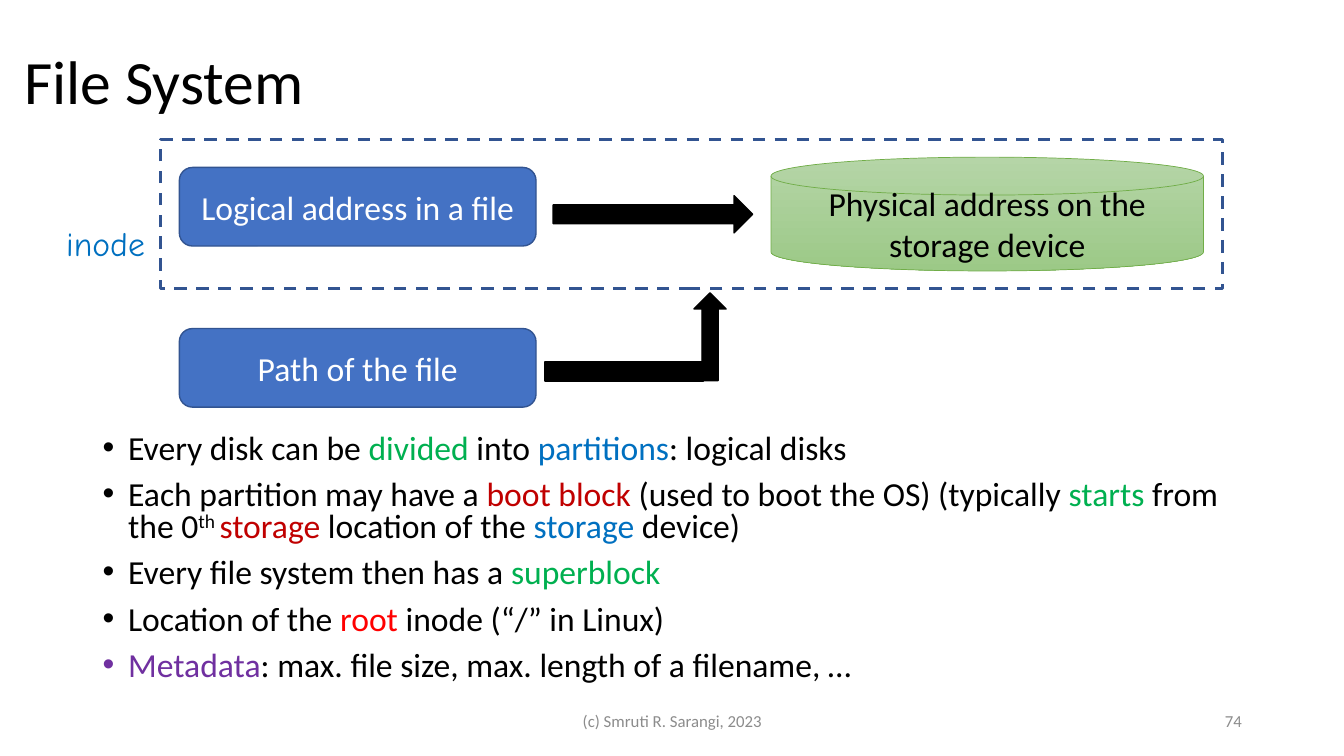
from dataclasses import dataclass
from typing import NamedTuple

from lxml.etree import SubElement
from pptx import Presentation
from pptx.dml.color import RGBColor
from pptx.enum.dml import MSO_LINE
from pptx.enum.shapes import MSO_SHAPE
from pptx.enum.text import MSO_ANCHOR, PP_ALIGN
from pptx.oxml.ns import qn
from pptx.shapes.autoshape import Shape
from pptx.slide import Slide
from pptx.text.text import TextFrame
from pptx.util import Cm, Pt

BLACK, WHITE, GRAY = "000000", "FFFFFF", "8C8C8C"
BLUE, GREEN, RED = "0070C0", "00B050", "C00000"
BOX_FILL, BOX_EDGE = "4472C4", "325491"
DISK_TOP, DISK_BOTTOM, DISK_EDGE = "B5D5A7", "9CC987", "70AD47"
BULLET_INDENT = 0.64


class Span(NamedTuple):
    text: str
    color: str = BLACK
    superscript: bool = False


class Box(NamedTuple):
    left: float
    top: float
    width: float
    height: float


@dataclass
class Block:
    """A diagram shape; two fill colours make a vertical gradient."""
    kind: MSO_SHAPE
    box: Box
    fill: tuple[str, ...] = (BLACK,)
    edge: str = BLACK
    edge_width: float = 1
    label: str = ""
    label_color: str = WHITE
    rotation: float = 0
    dashed: bool = False


@dataclass
class Caption:
    text: str
    box: Box
    size: float
    color: str = BLACK
    font: str = "Calibri"
    align: PP_ALIGN = PP_ALIGN.LEFT
    anchor: MSO_ANCHOR = MSO_ANCHOR.MIDDLE
    line_spacing: float = 1
    wrap: bool = True


ADDRESS_BOX = Box(4.52, 4.22, 8.99, 1.98)

BLOCKS = [
    Block(MSO_SHAPE.ROUNDED_RECTANGLE, ADDRESS_BOX, (BOX_FILL,), BOX_EDGE,
          label="Logical address in a file"),
    Block(MSO_SHAPE.RIGHT_ARROW, Box(13.94, 4.93, 5.03, 0.94)),
    Block(MSO_SHAPE.FLOWCHART_MAGNETIC_DISK, Box(19.43, 3.96, 10.9, 2.87),
          (DISK_TOP, DISK_BOTTOM), DISK_EDGE, 0.5,
          "Physical address on the storage device", BLACK),
    Block(MSO_SHAPE.ROUNDED_RECTANGLE, ADDRESS_BOX._replace(top=8.28),
          (BOX_FILL,), BOX_EDGE, label="Path of the file"),
    Block(MSO_SHAPE.RECTANGLE, Box(4.04, 3.51, 26.77, 3.76), (), BOX_EDGE,
          2.25, dashed=True),
    Block(MSO_SHAPE.RECTANGLE, Box(13.74, 9.12, 3.99, 0.48)),
    Block(MSO_SHAPE.RIGHT_ARROW, Box(16.79, 8.08, 2.21, 0.81), rotation=270),
]

CAPTIONS = [
    Caption("File System", Box(0.36, 0.28, 29.21, 3.68), 44, line_spacing=0.9),
    Caption("(c) Smruti R. Sarangi, 2023", Box(11.23, 17.65, 11.43, 1.02), 12,
            GRAY, align=PP_ALIGN.CENTER),
    Caption("74", Box(23.93, 17.65, 7.62, 1.02), 12, GRAY,
            align=PP_ALIGN.RIGHT),
    Caption("inode", Box(1.42, 5.49, 2.62, 1.27), 24, BLUE, "Comic Neue",
            anchor=MSO_ANCHOR.TOP, wrap=False),
]

BULLETS_BOX = Box(2.34, 10.82, 29.21, 7.11)
BULLETS = [
    [Span("Every disk can be "), Span("divided", GREEN), Span(" into "),
     Span("partitions", BLUE), Span(": logical disks")],
    [Span("Each partition may have a "), Span("boot block ", RED),
     Span("(used to boot the OS) (typically "), Span("starts", GREEN),
     Span(" from the 0"), Span("th ", superscript=True), Span("storage", RED),
     Span(" location of the "), Span("storage", BLUE), Span(" device)")],
    [Span("Every file system then has a "), Span("superblock", GREEN)],
    [Span("Location of the "), Span("root ", "FF0000"),
     Span("inode (“/” in Linux)")],
    [Span("Metadata", "7030A0"),
     Span(": max. file size, max. length of a filename, …")],
]


def rgb(value: str) -> RGBColor:
    return RGBColor.from_string(value)


def lengths(box: Box) -> list[Cm]:
    return [Cm(value) for value in box]


def write(frame: TextFrame, paragraphs: list[list[Span]], *, size: float = 24,
          font: str = "Calibri", align: PP_ALIGN = PP_ALIGN.LEFT,
          anchor: MSO_ANCHOR = MSO_ANCHOR.MIDDLE, line_spacing: float = 1,
          space_before: float = 0, bulleted: bool = False,
          wrap: bool = True) -> None:
    frame.word_wrap = wrap
    frame.vertical_anchor = anchor
    for index, spans in enumerate(paragraphs):
        paragraph = frame.add_paragraph() if index else frame.paragraphs[0]
        if bulleted:
            properties = paragraph._p.get_or_add_pPr()
            properties.set("marL", str(Cm(BULLET_INDENT)))
            properties.set("indent", str(-Cm(BULLET_INDENT)))
            SubElement(properties, qn("a:buFont"), typeface="Arial")
            SubElement(properties, qn("a:buChar"), char="•")
        paragraph.alignment = align
        paragraph.line_spacing = line_spacing
        paragraph.space_before = Pt(space_before if index else 0)
        for span in spans:
            run = paragraph.add_run()
            run.text = span.text
            run.font.size = Pt(size)
            run.font.name = font
            run.font.color.rgb = rgb(span.color)
            if span.superscript:
                run._r.get_or_add_rPr().set("baseline", "30000")


def paint(shape: Shape, colors: tuple[str, ...]) -> None:
    if not colors:
        shape.fill.background()
    elif len(colors) == 1:
        shape.fill.solid()
        shape.fill.fore_color.rgb = rgb(colors[0])
    else:
        shape.fill.gradient()
        shape.fill.gradient_angle = 270
        for stop, color in zip(shape.fill.gradient_stops, colors):
            stop.color.rgb = rgb(color)


def add_block(slide: Slide, block: Block) -> None:
    shape = slide.shapes.add_shape(block.kind, *lengths(block.box))
    shape.shadow.inherit = False
    shape.rotation = block.rotation
    paint(shape, block.fill)
    shape.line.color.rgb = rgb(block.edge)
    shape.line.width = Pt(block.edge_width)
    if block.dashed:
        shape.line.dash_style = MSO_LINE.DASH
    if block.label:
        write(shape.text_frame, [[Span(block.label, block.label_color)]],
              align=PP_ALIGN.CENTER)


def add_caption(slide: Slide, caption: Caption) -> None:
    frame = slide.shapes.add_textbox(*lengths(caption.box)).text_frame
    write(frame, [[Span(caption.text, caption.color)]], size=caption.size,
          font=caption.font, align=caption.align, anchor=caption.anchor,
          line_spacing=caption.line_spacing, wrap=caption.wrap)


def main() -> None:
    presentation = Presentation()
    presentation.slide_width, presentation.slide_height = Cm(33.87), Cm(19.05)
    slide = presentation.slides.add_slide(presentation.slide_layouts[6])
    for block in BLOCKS:
        add_block(slide, block)
    for caption in CAPTIONS:
        add_caption(slide, caption)
    bullets = slide.shapes.add_textbox(*lengths(BULLETS_BOX))
    write(bullets.text_frame, BULLETS, anchor=MSO_ANCHOR.TOP,
          line_spacing=0.8, space_before=10, bulleted=True)
    presentation.save("out.pptx")


if __name__ == "__main__":
    main()
